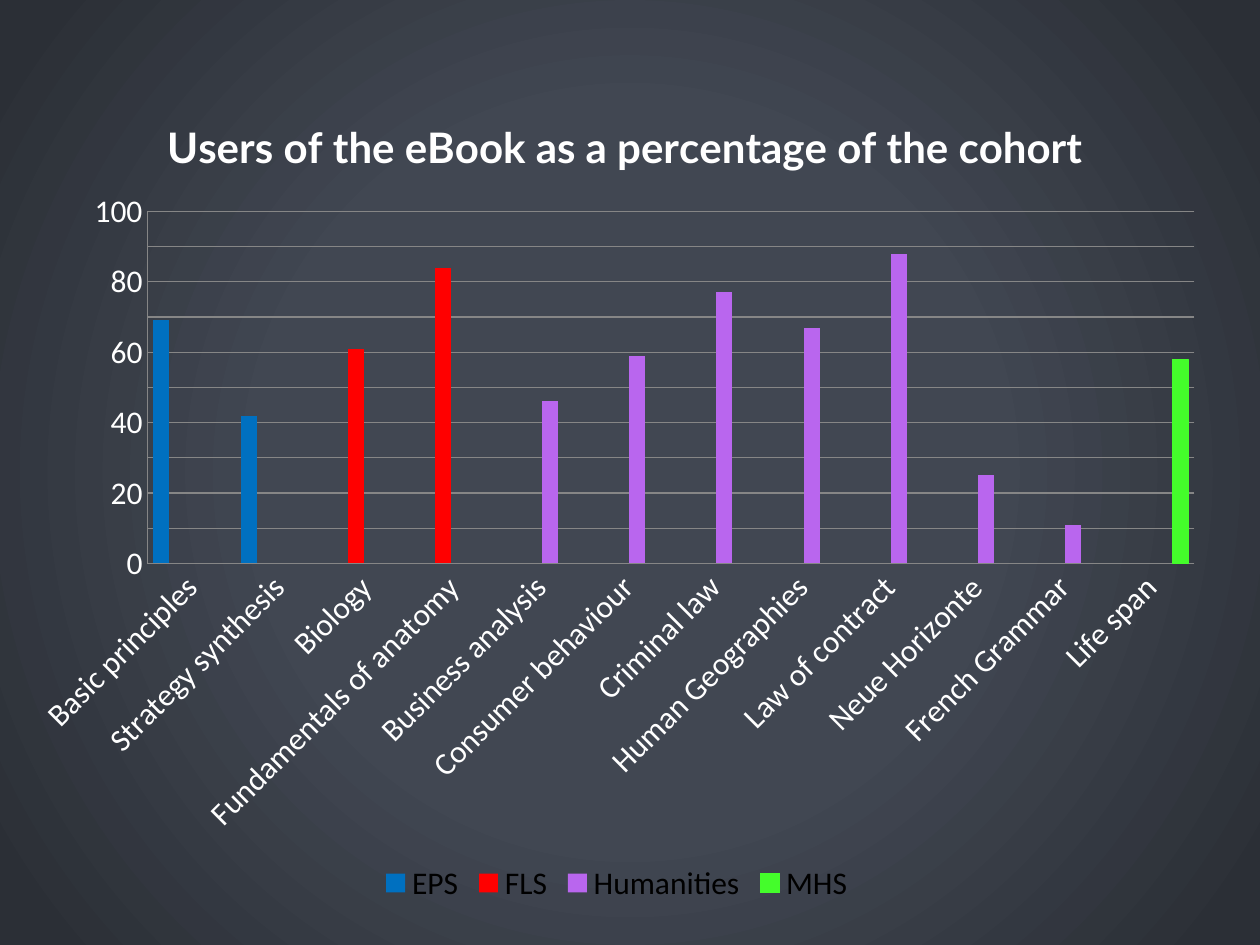
"""Build a slide with a column chart of eBook users by course."""
from lxml import etree
from pptx import Presentation
from pptx.chart.data import CategoryChartData
from pptx.dml.color import RGBColor
from pptx.enum import chart as charts
from pptx.oxml import ns, parse_xml
from pptx.util import Pt

COURSES = {
    "EPS": {"Basic principles": 69, "Strategy synthesis": 42},
    "FLS": {"Biology": 61, "Fundamentals of anatomy": 84},
    "Humanities": {
        "Business analysis": 46, "Consumer behaviour": 59, "Criminal law": 77,
        "Human Geographies": 67, "Law of contract": 88, "Neue Horizonte": 25,
        "French Grammar": 11,
    },
    "MHS": {"Life span": 58},
}
FACULTY_COLORS = ["0070C0", "FF0000", "B966EE", "44FD2B"]
BACKGROUND_STOPS = [(0, "414752"), (46, "414752"), (95, "2B2F36")]
WHITE, BLACK, GRAY = "FFFFFF", "000000", "868686"


def rgb(color):
    """Return the colour for a hex string."""
    return RGBColor.from_string(color)


def format_font(font, size, color, name="Calibri", bold=False):
    """Set the look of a font."""
    font.size, font.name, font.bold = Pt(size), name, bold
    font.color.rgb = rgb(color)


def set_background(slide):
    """Give the slide a circular gradient from its centre."""
    slide.background.fill.gradient()
    gradient = slide.element.find(".//" + ns.qn("a:gradFill"))
    stops = "".join(
        f'<a:gs pos="{position * 1000}"><a:srgbClr val="{color}"/></a:gs>'
        for position, color in BACKGROUND_STOPS
    )
    gradient.getparent().replace(gradient, parse_xml(
        f'<a:gradFill {ns.nsdecls("a")} rotWithShape="1"><a:gsLst>{stops}</a:gsLst>'
        '<a:path path="circle"><a:fillToRect l="50000" t="50000" r="50000" b="50000"/>'
        "</a:path></a:gradFill>"
    ))


def set_layout(element, index, **values):
    """Place a chart part by fractions of the chart area."""
    for old in element.findall(ns.qn("c:layout")):
        element.remove(old)
    layout = etree.Element(ns.qn("c:layout"))
    manual = etree.SubElement(layout, ns.qn("c:manualLayout"))
    for tag, value in values.items():
        etree.SubElement(manual, ns.qn("c:" + tag)).set("val", str(value))
    element.insert(index, layout)


def add_chart(slide):
    """Add the clustered columns with one series per faculty."""
    data = CategoryChartData()
    data.categories = [course for group in COURSES.values() for course in group]
    for faculty, group in COURSES.items():
        data.add_series(faculty, [group.get(c.label) for c in data.categories])
    frame = slide.shapes.add_chart(
        charts.XL_CHART_TYPE.COLUMN_CLUSTERED,
        Pt(8.64), Pt(43.2), Pt(687.6), Pt(475.92), data)
    chart = frame.chart
    format_font(chart.font, 18, BLACK)
    return chart


def format_title(chart):
    """Write and place the chart title."""
    title = chart.chart_title
    title.text_frame.text = "Users of the eBook as a percentage of the cohort"
    run = title.text_frame.paragraphs[0].runs[0]
    format_font(run.font, 24, WHITE, "Lato", True)
    title.include_in_layout = False
    set_layout(title._element, 1, xMode="edge", yMode="edge", x=0.12, y=0.04)


def format_axis(axis):
    """Give an axis white labels, a gray line and no ticks."""
    axis.major_tick_mark = axis.minor_tick_mark = charts.XL_TICK_MARK.NONE
    axis.format.line.color.rgb = rgb(GRAY)
    format_font(axis.tick_labels.font, 18, WHITE)


def format_axes(chart):
    """Set the scale, the gridlines and the slanted course names."""
    courses, percent = chart.category_axis, chart.value_axis
    for axis in (courses, percent):
        format_axis(axis)
    labels = courses._element.find(ns.qn("c:txPr")).find(ns.qn("a:bodyPr"))
    labels.set("rot", "-2700000")
    labels.set("vert", "horz")
    percent.minimum_scale, percent.maximum_scale, percent.major_unit = 0, 100, 10
    percent.has_major_gridlines = True
    percent.major_gridlines.format.line.color.rgb = rgb(GRAY)


def format_columns(chart):
    """Place the plot and colour the columns of each faculty."""
    plot = chart.plots[0]
    plot.gap_width, plot.overlap, plot.vary_by_categories = 75, -25, False
    for series, color in zip(plot.series, FACULTY_COLORS):
        series.format.fill.solid()
        series.format.fill.fore_color.rgb = rgb(color)
        series.invert_if_negative = False
    outline = plot.series[-1].format.line
    outline.color.rgb = rgb(FACULTY_COLORS[-1])
    outline.width = Pt(0.75)
    plot_area = chart._chartSpace.find(".//" + ns.qn("c:plotArea"))
    set_layout(plot_area, 0, layoutTarget="inner", xMode="edge", yMode="edge",
               x=0.11, y=0.163, w=0.87, h=0.423)


def format_legend(chart):
    """Show the faculties below the chart."""
    chart.has_legend = True
    chart.legend.position = charts.XL_LEGEND_POSITION.BOTTOM
    chart.legend.include_in_layout = False
    format_font(chart.legend.font, 18, BLACK)


def main():
    """Build and save the presentation."""
    presentation = Presentation()
    presentation.slide_width, presentation.slide_height = Pt(720), Pt(540)
    slide = presentation.slides.add_slide(presentation.slide_layouts[6])
    set_background(slide)
    chart = add_chart(slide)
    format_title(chart)
    format_axes(chart)
    format_columns(chart)
    format_legend(chart)
    presentation.save("out.pptx")


if __name__ == "__main__":
    main()
